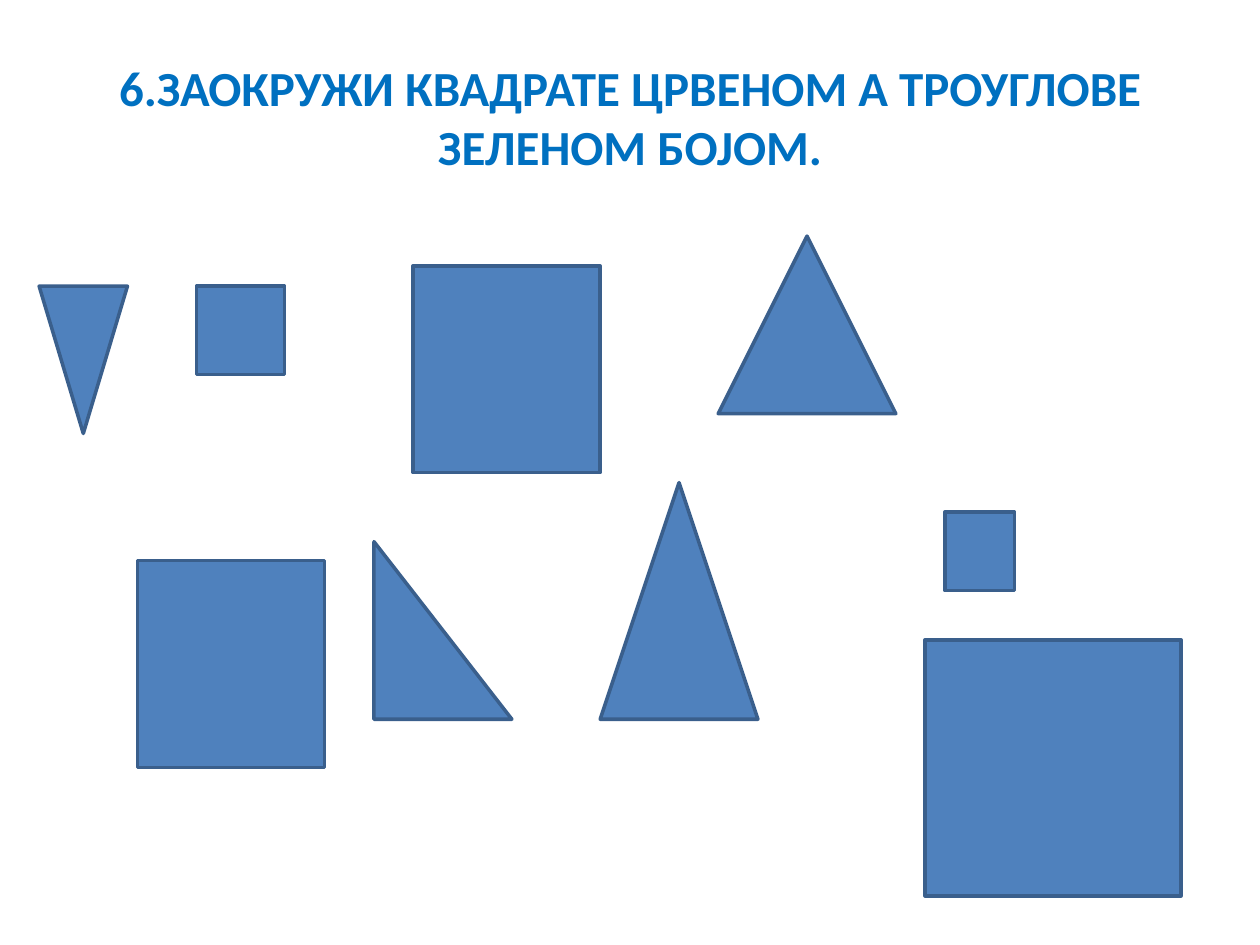
"""Build a worksheet slide on which pupils circle squares and triangles."""
from pptx import Presentation
from pptx.dml.color import RGBColor
from pptx.enum.shapes import MSO_SHAPE
from pptx.enum.text import MSO_ANCHOR, PP_ALIGN
from pptx.util import Cm, Pt

TITLE = "6.ЗАОКРУЖИ КВАДРАТЕ ЦРВЕНОМ А ТРОУГЛОВЕ ЗЕЛЕНОМ БОЈОМ."
FIGURES = [
    (MSO_SHAPE.FLOWCHART_MERGE, 0.79, 5.77, 1.78, 2.97),
    (MSO_SHAPE.RIGHT_TRIANGLE, 7.54, 10.92, 2.78, 3.58),
    (MSO_SHAPE.RECTANGLE, 3.96, 5.77, 1.78, 1.78),
    (MSO_SHAPE.RECTANGLE, 2.77, 11.3, 3.77, 4.17),
    (MSO_SHAPE.RECTANGLE, 8.33, 5.36, 3.77, 4.17),
    (MSO_SHAPE.ISOSCELES_TRIANGLE, 12.1, 9.73, 3.18, 4.77),
    (MSO_SHAPE.ISOSCELES_TRIANGLE, 14.48, 4.76, 3.58, 3.58),
    (MSO_SHAPE.RECTANGLE, 19.05, 10.32, 1.4, 1.59),
    (MSO_SHAPE.RECTANGLE, 18.65, 12.9, 5.16, 5.16),
]


def color(value):
    """Return the colour for a hex string."""
    return RGBColor.from_string(value)


def add_title(slide, text):
    """Add the centred, bold task heading."""
    shape = slide.shapes.add_textbox(Cm(1.27), Cm(0.76), Cm(22.86), Cm(3.18))
    text_frame = shape.text_frame
    text_frame.word_wrap = True
    text_frame.vertical_anchor = MSO_ANCHOR.MIDDLE
    text_frame.text = text
    paragraph = text_frame.paragraphs[0]
    paragraph.alignment = PP_ALIGN.CENTER
    font = paragraph.runs[0].font
    font.name = "Calibri"
    font.size = Pt(28)
    font.bold = True
    font.color.rgb = color("0070C0")


def add_figure(slide, kind, left, top, width, height):
    """Add one geometric figure, measured in centimetres."""
    shape = slide.shapes.add_shape(kind, Cm(left), Cm(top), Cm(width), Cm(height))
    shape.shadow.inherit = False
    shape.fill.solid()
    shape.fill.fore_color.rgb = color("4F81BD")
    shape.line.color.rgb = color("3A5F8C")
    shape.line.width = Pt(2)


def main():
    """Build and save the presentation."""
    presentation = Presentation()
    presentation.slide_width = Cm(25.4)
    presentation.slide_height = Cm(19.05)
    slide = presentation.slides.add_slide(presentation.slide_layouts[6])
    add_title(slide, TITLE)
    for figure in FIGURES:
        add_figure(slide, *figure)
    presentation.save("out.pptx")


if __name__ == "__main__":
    main()
